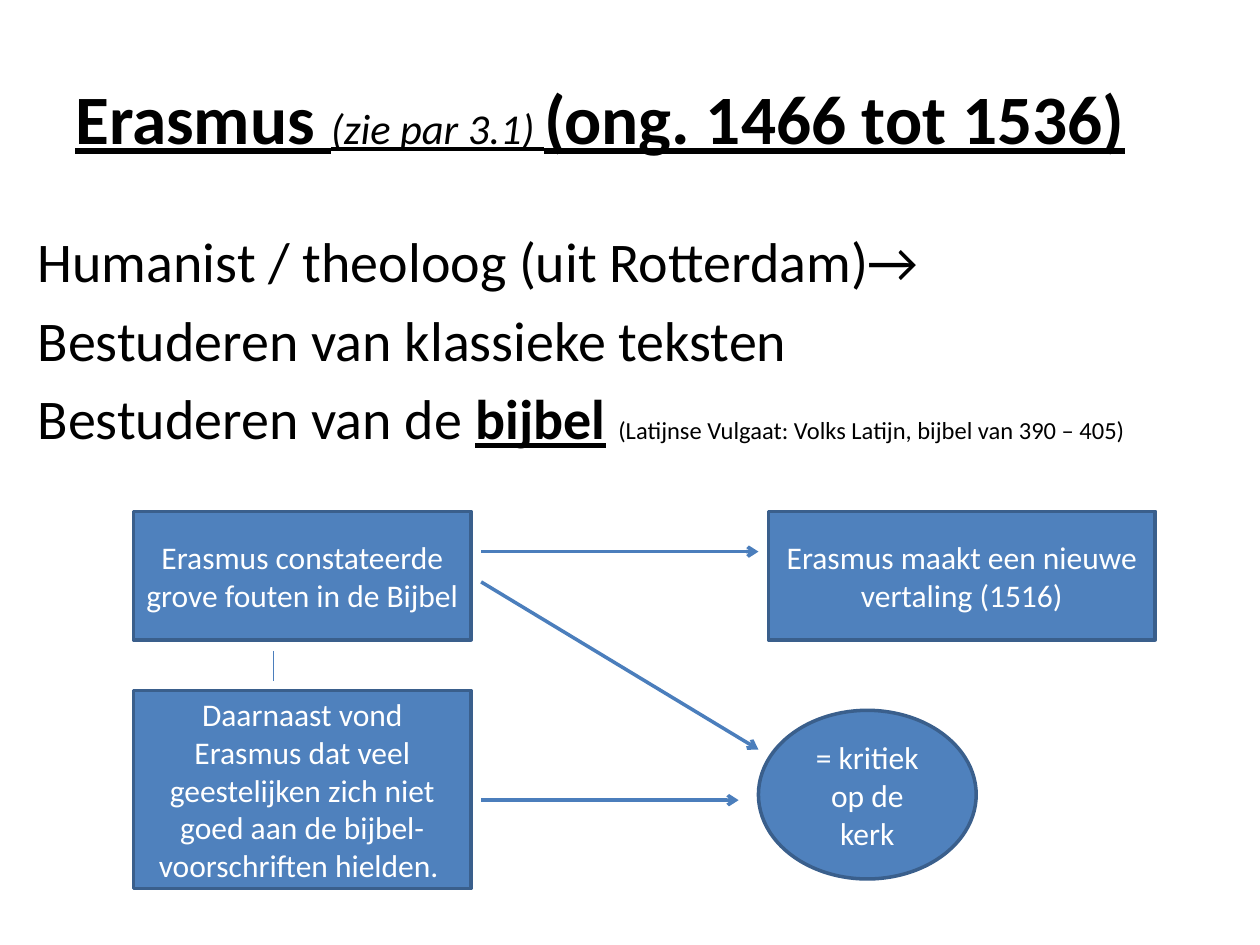
from dataclasses import dataclass

from lxml import etree
from pptx import Presentation
from pptx.dml.color import RGBColor
from pptx.enum import shapes, text
from pptx.oxml import ns
from pptx.util import Cm, Pt


@dataclass(frozen=True)
class Theme:
    font: str = "Calibri"
    ink: str = "000000"
    paper: str = "FFFFFF"
    fill: str = "4F81BD"
    border: str = "3A5F8C"
    arrow: str = "4B7EBC"
    title: float = 39.6
    aside: float = 24.3
    body: float = 32
    note: float = 14
    label: float = 18
    gap: float = 6.4
    stroke: float = 2
    hairline: float = 0.75


T = Theme()


def add_run(p, words, size, color=T.ink, **style):
    r = p.add_run()
    r.text = words
    r.font.color.rgb = RGBColor.from_string(color)
    for name, value in {"name": T.font, "size": Pt(size), **style}.items():
        setattr(r.font, name, value)


def add_text(s, box, paragraphs, anchor):
    tf = s.shapes.add_textbox(*map(Cm, box)).text_frame
    tf.word_wrap = True
    tf.vertical_anchor = anchor
    for i, runs in enumerate(paragraphs):
        p = tf.paragraphs[0] if i == 0 else tf.add_paragraph()
        p.space_before = Pt(T.gap if i else 0)
        for words, size, style in runs:
            add_run(p, words, size, **style)


def add_title(s, box):
    strong = {"bold": True, "underline": True}
    runs = [
        ("Erasmus ", T.title, strong),
        ("(zie par 3.1) ", T.aside, {"italic": True, "underline": True}),
        ("(ong. 1466 tot 1536)", T.title, strong),
    ]
    add_text(s, box, [runs], text.MSO_ANCHOR.MIDDLE)


def add_body(s, box):
    paragraphs = [
        [("Humanist / theoloog (uit Rotterdam)→", T.body, {})],
        [("Bestuderen van klassieke teksten", T.body, {})],
        [
            ("Bestuderen van de ", T.body, {}),
            ("bijbel", T.body, {"bold": True, "underline": True}),
            (" ", T.body, {}),
            ("(Latijnse Vulgaat: Volks Latijn, bijbel van 390 – 405)", T.note, {}),
        ],
    ]
    add_text(s, box, paragraphs, text.MSO_ANCHOR.TOP)


def add_node(s, kind, box, words):
    sp = s.shapes.add_shape(kind, *map(Cm, box))
    sp.shadow.inherit = False
    sp.fill.solid()
    sp.fill.fore_color.rgb = RGBColor.from_string(T.fill)
    sp.line.color.rgb = RGBColor.from_string(T.border)
    sp.line.width = Pt(T.stroke)
    tf = sp.text_frame
    tf.word_wrap = True
    tf.vertical_anchor = text.MSO_ANCHOR.MIDDLE
    p = tf.paragraphs[0]
    p.alignment = text.PP_ALIGN.CENTER
    add_run(p, words, T.label, T.paper)


def add_link(s, ends, width=T.stroke, head=True):
    c = s.shapes.add_connector(shapes.MSO_CONNECTOR.STRAIGHT, *map(Cm, ends))
    c.line.color.rgb = RGBColor.from_string(T.arrow)
    c.line.width = Pt(width)
    if head:
        etree.SubElement(c.line._get_or_add_ln(), ns.qn("a:tailEnd"), type="arrow")
    etree.SubElement(c._element.spPr, ns.qn("a:effectLst"))


def add_diagram(s, box):
    x, y, w, h = box
    rect, oval = shapes.MSO_SHAPE.RECTANGLE, shapes.MSO_SHAPE.OVAL
    left_w, right_w, top_h, low_h = 6.81, 7.8, 2.59, 3.99
    critique_x, critique_y = x + 12.6, y + 4.01
    low_y = y + h - low_h

    add_node(s, rect, (x, y, left_w, top_h),
             "Erasmus constateerde grove fouten in de Bijbel")
    add_node(s, oval, (critique_x, critique_y, 4.39, 3.4), "= kritiek op de kerk")
    add_node(s, rect, (x + w - right_w, y, right_w, top_h),
             "Erasmus maakt een nieuwe vertaling (1516)")
    add_node(s, rect, (x, low_y, left_w, low_h),
             "Daarnaast vond Erasmus dat veel geestelijken zich niet goed "
             "aan de bijbel- voorschriften hielden. ")

    start = x + left_w + 0.2
    for y1, end, y2 in [
        (0.81, critique_x, 0.81),
        (1.42, critique_x, 4.8),
        (5.82, critique_x - 0.4, 5.82),
    ]:
        add_link(s, (start, y + y1, end, y + y2))
    stem = x + 2.82
    add_link(s, (stem, y + top_h + 0.22, stem, low_y - 0.2), T.hairline, head=False)


def main():
    prs = Presentation()
    prs.slide_width, prs.slide_height = Cm(25.4), Cm(19.05)
    s = prs.slides.add_slide(prs.slide_layouts[6])
    add_title(s, (1.27, 0.76, 22.86, 3.18))
    add_body(s, (0.51, 4.45, 23.62, 12.57))
    add_diagram(s, (2.69, 10.31, 20.6, 7.6))
    prs.save("out.pptx")


if __name__ == "__main__":
    main()
